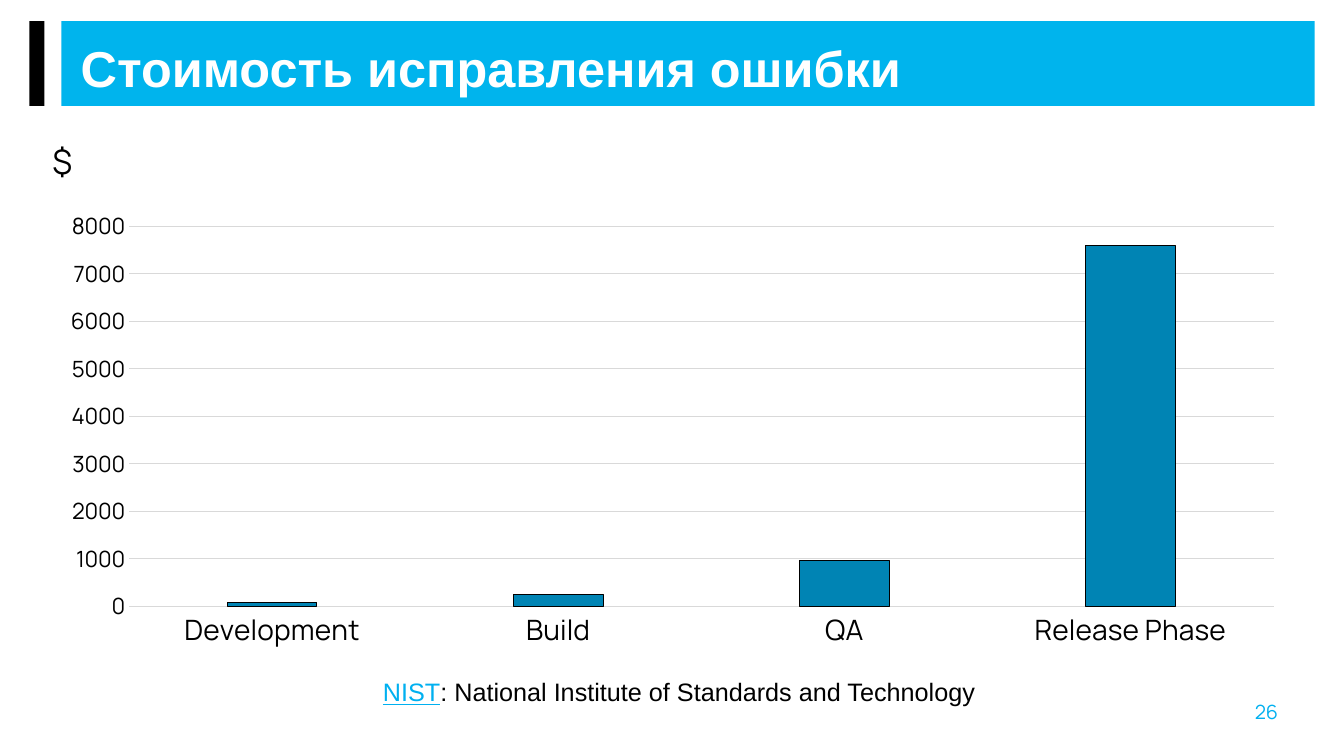
from lxml import etree
from pptx import Presentation
from pptx.chart.data import CategoryChartData
from pptx.dml.color import RGBColor
from pptx.enum.chart import XL_CHART_TYPE, XL_TICK_MARK
from pptx.enum.shapes import MSO_SHAPE
from pptx.enum.text import MSO_ANCHOR, PP_ALIGN
from pptx.oxml.ns import qn
from pptx.util import Inches, Pt

RECTANGLE, OVAL = MSO_SHAPE.RECTANGLE, MSO_SHAPE.OVAL
COLUMN_CLUSTERED = XL_CHART_TYPE.COLUMN_CLUSTERED
NO_TICKS = XL_TICK_MARK.NONE
TOP, MIDDLE = MSO_ANCHOR.TOP, MSO_ANCHOR.MIDDLE
LEFT = PP_ALIGN.LEFT

BLACK = RGBColor(0x00, 0x00, 0x00)
WHITE = RGBColor(0xFF, 0xFF, 0xFF)
BANNER_BLUE = RGBColor(0x00, 0xB4, 0xED)
ACCENT_BLUE = RGBColor(0x00, 0xB0, 0xF0)
COLUMN_BLUE = RGBColor(0x00, 0x84, 0xB4)
GRID_GRAY = RGBColor(0xD9, 0xD9, 0xD9)


def format_font(font, name, size, color, bold=False):
    font.name = name
    font.size = Pt(size)
    font.color.rgb = color
    font.bold = bold


def set_layout(parent, index, **settings):
    for old_layout in parent.findall(qn("c:layout")):
        parent.remove(old_layout)
    layout = etree.Element(qn("c:layout"))
    manual = etree.SubElement(layout, qn("c:manualLayout"))
    for tag, value in settings.items():
        etree.SubElement(manual, qn(f"c:{tag}")).set("val", str(value))
    parent.insert(index, layout)


presentation = Presentation()
presentation.slide_width = Inches(13.33)
presentation.slide_height = Inches(7.5)
slide = presentation.slides.add_slide(presentation.slide_layouts[5])
shapes = slide.shapes

title = shapes.title
for left, width, color in ((0.61, 12.43, BANNER_BLUE), (0.29, 0.15, BLACK)):
    bar = shapes.add_shape(RECTANGLE, Inches(left), Inches(0.21), Inches(width), Inches(0.84))
    bar.shadow.inherit = False
    bar.fill.solid()
    bar.fill.fore_color.rgb = color
    bar.line.fill.background()
    title.element.addprevious(bar.element)

title.left, title.top = Inches(0.7), Inches(0.35)
title.width, title.height = Inches(12.11), Inches(0.71)
title.text_frame.text = "Стоимость исправления ошибки"
title.text_frame.vertical_anchor = MIDDLE
paragraph = title.text_frame.paragraphs[0]
paragraph.alignment = LEFT
paragraph.line_spacing = 0.9
format_font(paragraph.runs[0].font, "Arial", 36, WHITE, True)

page_number = shapes.add_shape(OVAL, Inches(12.21), Inches(6.78), Inches(0.94), Inches(0.77))
page_number.shadow.inherit = False
page_number.fill.background()
page_number.line.fill.background()
page_number.text_frame.text = "26"
page_number.text_frame.vertical_anchor = TOP
paragraph = page_number.text_frame.paragraphs[0]
paragraph.alignment = LEFT
format_font(paragraph.runs[0].font, "Manrope", 14, ACCENT_BLUE)

chart_data = CategoryChartData()
chart_data.categories = ["Development", "Build", "QA", "Release Phase"]
chart_data.add_series("Series 1", (80, 240, 960, 7600))
chart = shapes.add_chart(
    COLUMN_CLUSTERED, Inches(0.46), Inches(1.17), Inches(12.42), Inches(5.37), chart_data
).chart
chart.has_legend = False
format_font(chart.font, "Manrope", 10, BLACK)

chart.has_title = True
chart_title = chart.chart_title
chart_title.text_frame.text = "$"
format_font(chart_title.text_frame.paragraphs[0].runs[0].font, "Manrope", 24, BLACK)
set_layout(chart_title.element, 1, xMode="edge", yMode="edge", x=0, y=0.02)
plot_area = chart.element.find(qn("c:chart")).find(qn("c:plotArea"))
set_layout(
    plot_area, 0, layoutTarget="inner", xMode="edge", yMode="edge", x=0.066, y=0.2, w=0.914, h=0.702
)

plot = chart.plots[0]
plot.vary_by_categories = False
plot.gap_width = 219
plot.overlap = -27
columns = plot.series[0].format
columns.fill.solid()
columns.fill.fore_color.rgb = COLUMN_BLUE
columns.line.color.rgb = BLACK
columns.line.width = Pt(0.75)

category_axis, value_axis = chart.category_axis, chart.value_axis
for axis, size in ((category_axis, 20), (value_axis, 16)):
    axis.major_tick_mark = NO_TICKS
    axis.minor_tick_mark = NO_TICKS
    format_font(axis.tick_labels.font, "Manrope", size, BLACK)
value_axis.minimum_scale = 0
value_axis.maximum_scale = 8000
value_axis.major_unit = 1000
value_axis.format.line.fill.background()
for line in (category_axis.format.line, value_axis.major_gridlines.format.line):
    line.color.rgb = GRID_GRAY
    line.width = Pt(0.75)

source_note = shapes.add_textbox(Inches(3.7), Inches(6.66), Inches(6.1), Inches(0.4))
source_note.text_frame.word_wrap = False
paragraph = source_note.text_frame.paragraphs[0]
for text, color, underline in (
    ("NIST", ACCENT_BLUE, True),
    (": National Institute of Standards and Technology", BLACK, False),
):
    run = paragraph.add_run()
    run.text = text
    format_font(run.font, "Arial", 18, color)
    run.font.underline = underline

presentation.save("out.pptx")
